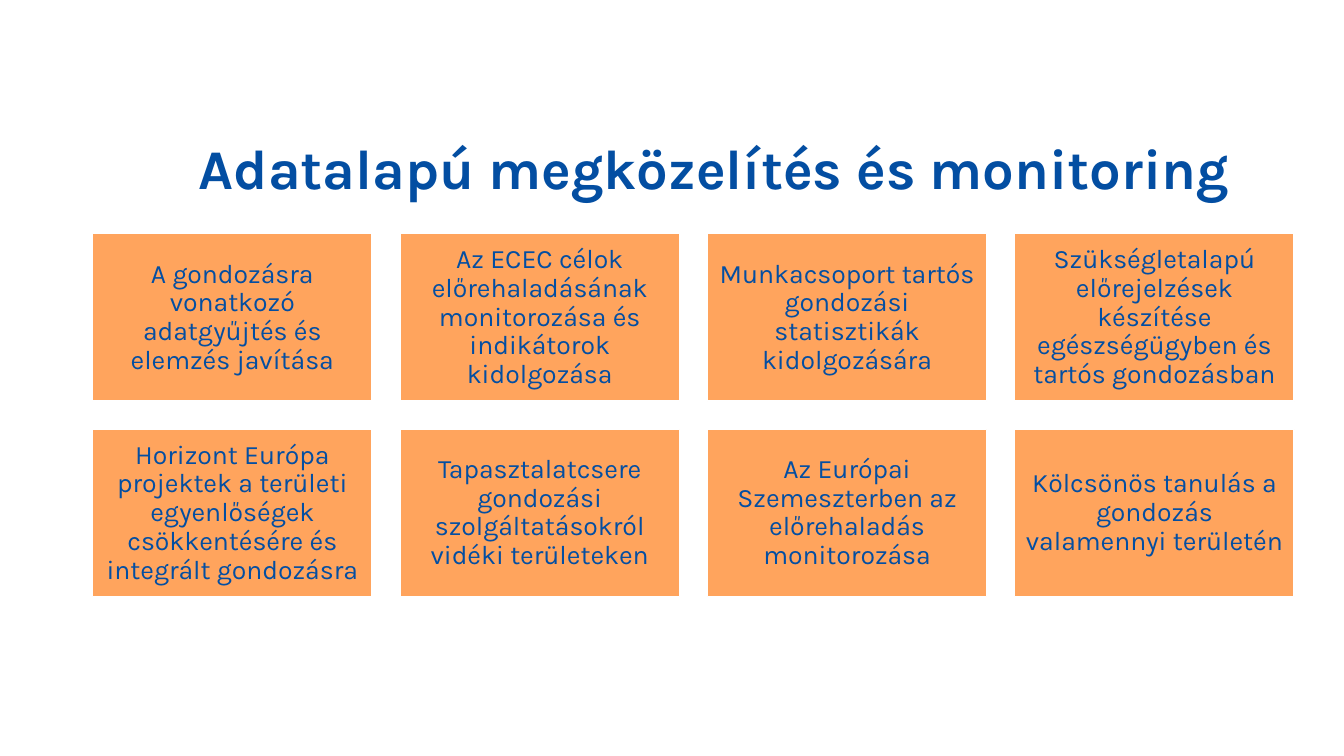
from dataclasses import dataclass

from pptx import Presentation
from pptx.dml.color import RGBColor
from pptx.enum.shapes import MSO_SHAPE
from pptx.enum.text import MSO_ANCHOR, PP_ALIGN
from pptx.util import Pt


@dataclass(frozen=True)
class Theme:
    font: str = "Karla"
    blue: RGBColor = RGBColor(0x03, 0x4E, 0xA2)
    orange: RGBColor = RGBColor(0xFF, 0xA4, 0x5D)
    white: RGBColor = RGBColor(0xFF, 0xFF, 0xFF)
    title_size: float = 40
    card_size: float = 19


@dataclass(frozen=True)
class Box:
    left: float
    top: float
    width: float
    height: float

    def lengths(self):
        return Pt(self.left), Pt(self.top), Pt(self.width), Pt(self.height)


THEME = Theme()
TITLE = "Adatalapú megközelítés és monitoring"
MEASURES = [
    "A gondozásra vonatkozó adatgyűjtés és elemzés javítása",
    "Az ECEC célok előrehaladásának monitorozása és indikátorok kidolgozása",
    "Munkacsoport tartós gondozási statisztikák kidolgozására",
    "Szükségletalapú előrejelzések készítése egészségügyben és tartós gondozásban",
    "Horizont Európa projektek a területi egyenlőségek csökkentésére és integrált gondozásra",
    "Tapasztalatcsere gondozási szolgáltatásokról vidéki területeken",
    "Az Európai Szemeszterben az előrehaladás monitorozása",
    "Kölcsönös tanulás a gondozás valamennyi területén",
]


def write_text(shape, text, size, anchor, margins, bold=False):
    frame = shape.text_frame
    frame.text = text
    frame.word_wrap = True
    frame.vertical_anchor = anchor
    left, top, right, bottom = margins
    frame.margin_left, frame.margin_top = Pt(left), Pt(top)
    frame.margin_right, frame.margin_bottom = Pt(right), Pt(bottom)
    paragraph = frame.paragraphs[0]
    paragraph.alignment = PP_ALIGN.CENTER
    paragraph.line_spacing = 0.9
    font = paragraph.runs[0].font
    font.name = THEME.font
    font.size = Pt(size)
    font.bold = bold
    font.color.rgb = THEME.blue


def add_title(slide, box):
    shape = slide.shapes.add_textbox(*box.lengths())
    write_text(shape, TITLE, THEME.title_size, MSO_ANCHOR.BOTTOM, (7.2, 3.6, 7.2, 0), bold=True)


def add_card(slide, box, text):
    shape = slide.shapes.add_shape(MSO_SHAPE.RECTANGLE, *box.lengths())
    shape.shadow.inherit = False
    shape.fill.solid()
    shape.fill.fore_color.rgb = THEME.orange
    shape.line.color.rgb = THEME.white
    shape.line.width = Pt(1)
    write_text(shape, text, THEME.card_size, MSO_ANCHOR.MIDDLE, (5.7, 5.7, 5.7, 5.7))


def add_card_grid(slide, box, texts, columns=4, gap=20):
    rows = -(-len(texts) // columns)
    width = (box.width - gap * (columns - 1)) / columns
    height = (box.height - gap * (rows - 1)) / rows
    for index, text in enumerate(texts):
        row, column = divmod(index, columns)
        left = box.left + column * (width + gap)
        top = box.top + row * (height + gap)
        add_card(slide, Box(left, top, width, height), text)


def main():
    presentation = Presentation()
    presentation.slide_width = Pt(960)
    presentation.slide_height = Pt(540)
    slide = presentation.slides.add_slide(presentation.slide_layouts[6])
    add_title(slide, Box(76.3, 82, 867.6, 62))
    add_card_grid(slide, Box(66.2, 167, 858.2, 259.2), MEASURES)
    presentation.save("out.pptx")


if __name__ == "__main__":
    main()
